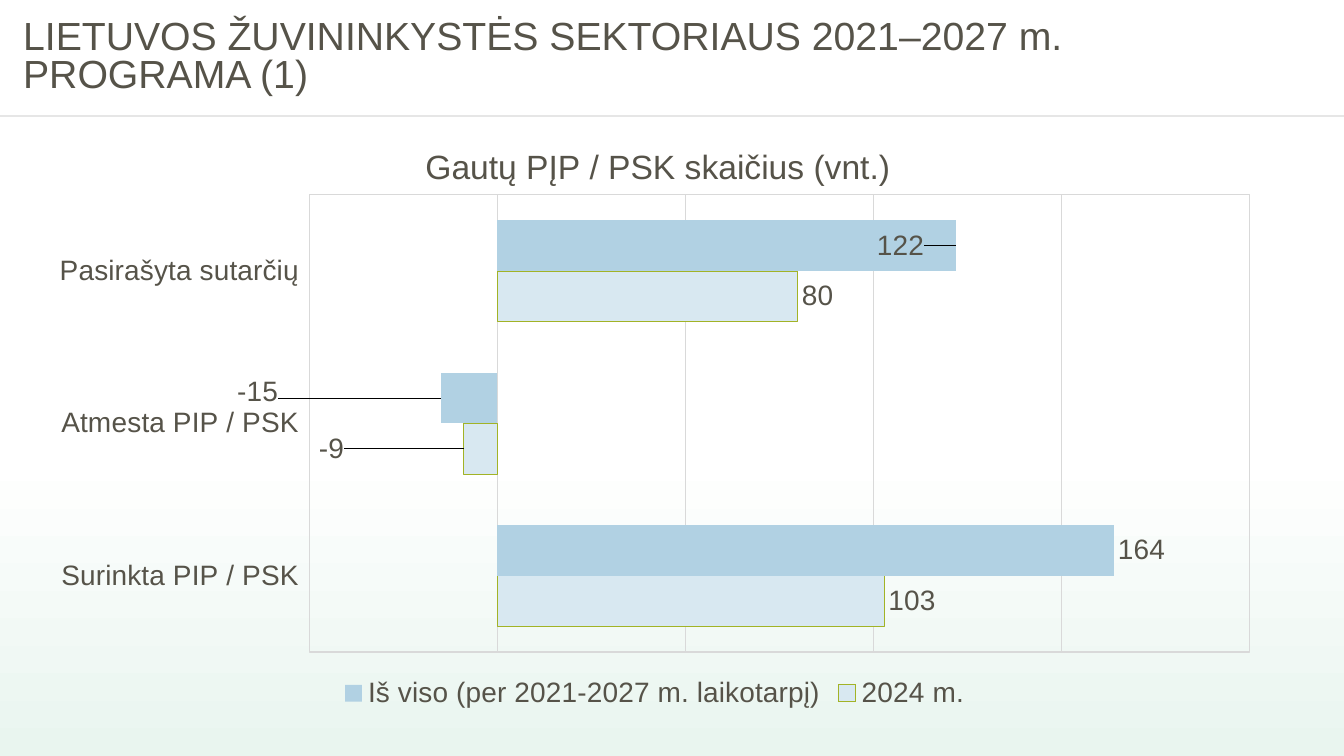
from pptx import Presentation
from pptx.chart.data import CategoryChartData
from pptx.dml.color import RGBColor
from pptx.enum.chart import XL_CHART_TYPE as ChartType
from pptx.enum.chart import XL_LABEL_POSITION as LabelPosition
from pptx.enum.chart import XL_LEGEND_POSITION as LegendPosition
from pptx.enum.chart import XL_TICK_LABEL_POSITION as TickLabels
from pptx.enum.chart import XL_TICK_MARK as TickMark
from pptx.enum.shapes import MSO_CONNECTOR as Connector
from pptx.enum.shapes import MSO_SHAPE as Shape
from pptx.enum.text import MSO_ANCHOR as Anchor
from pptx.enum.text import MSO_AUTO_SIZE as AutoSize
from pptx.enum.text import PP_ALIGN as Align
from pptx.oxml import parse_xml
from pptx.oxml.ns import nsdecls, qn
from pptx.util import Cm, Pt

TITLE_LINES = ["LIETUVOS ŽUVININKYSTĖS SEKTORIAUS 2021–2027 m. ", "PROGRAMA (1)"]
CHART_TITLE = "Gautų PĮP / PSK skaičius (vnt.)"
CATEGORIES = ["Surinkta PIP / PSK", "Atmesta PIP / PSK", "Pasirašyta sutarčių"]
# moved: point index -> label shift as a share of the chart's width and height
SERIES = [
    {"name": "2024 m.", "values": [103, -9, 80], "fill": "light", "line": "olive",
     "moved": {1: (-0.093, 0)}},
    {"name": "Iš viso (per 2021-2027 m. laikotarpį)", "values": [164, -15, 122],
     "fill": "blue", "line": None,
     "moved": {1: (-0.128, -0.01), 2: (-0.067, 0)}},
]
COLORS = {"text": "565349", "grid": "D9D9D9", "rule": "E6E6E6", "light": "D8E8F1",
          "blue": "B1D1E3", "olive": "A2B326", "mint": "E9F5EF", "white": "FFFFFF",
          "backdrop": "A6B727"}
FONT = "Arial"
WIDTH, HEIGHT = Cm(33.87), Cm(19.05)


def color(name):
    return RGBColor.from_string(COLORS[name])


def style_font(font, size):
    font.name, font.size, font.bold = FONT, Pt(size), False
    font.color.rgb = color("text")


def style_line(line, name, width=0.75):
    line.color.rgb = color(name)
    line.width = Pt(width)


def set_layout(parent, index, inner=False, **shares):
    """Give a chart part a manual layout, in shares of the chart's size."""
    for old in parent.findall(qn("c:layout")):
        parent.remove(old)
    target = '<c:layoutTarget val="inner"/>' if inner else ""
    modes = '<c:xMode val="edge"/><c:yMode val="edge"/>' if parent.tag != qn("c:dLbl") else ""
    sizes = "".join(f'<c:{key} val="{value}"/>' for key, value in shares.items())
    parent.insert(index, parse_xml(
        f'<c:layout {nsdecls("c")}><c:manualLayout>{target}{modes}{sizes}'
        "</c:manualLayout></c:layout>"))


def add_backdrop(page):
    page.background.fill.solid()
    page.background.fill.fore_color.rgb = color("backdrop")
    panel = page.shapes.add_shape(Shape.RECTANGLE, 0, 0, WIDTH, HEIGHT)
    panel.shadow.inherit = False
    panel.line.fill.background()
    panel.fill.gradient()
    panel.fill.gradient_angle = 90
    for stop, name, position in zip(panel.fill.gradient_stops, ("mint", "white"), (0, 0.4)):
        stop.color.rgb = color(name)
        stop.position = position
    rule = page.shapes.add_connector(Connector.STRAIGHT, 0, Cm(2.92), WIDTH, Cm(2.92))
    style_line(rule.line, "rule", 1)
    rule.element.spPr.append(parse_xml(f'<a:effectLst {nsdecls("a")}/>'))


def fill_title(page):
    title = page.shapes.title
    title.element.getparent().append(title.element)  # in front of the backdrop
    title.left, title.top, title.width, title.height = Cm(0.33), Cm(0.3), Cm(30.94), Cm(2.34)
    frame = title.text_frame
    frame.word_wrap, frame.auto_size = True, AutoSize.NONE
    frame.vertical_anchor = Anchor.MIDDLE
    para = frame.paragraphs[0]
    para.alignment, para.line_spacing = Align.LEFT, 0.8
    for number, line in enumerate(TITLE_LINES):
        if number:
            para.add_line_break()
        span = para.add_run()
        span.text = line
        style_font(span.font, 28)


def style_axes(chart):
    names, values = chart.category_axis, chart.value_axis
    names.tick_label_position = TickLabels.LOW
    names.major_tick_mark = names.minor_tick_mark = TickMark.NONE
    style_font(names.tick_labels.font, 20)
    style_line(names.format.line, "grid")
    values.minimum_scale, values.maximum_scale, values.major_unit = -50, 200, 50
    values.has_major_gridlines = True
    style_line(values.major_gridlines.format.line, "grid")
    values.visible = False


def style_series(chart):
    plot = chart.plots[0]
    plot.gap_width, plot.overlap, plot.vary_by_categories = 100, 0, False
    for series, entry, node in zip(plot.series, SERIES, chart.element.xpath(".//c:ser")):
        series.format.fill.solid()
        series.format.fill.fore_color.rgb = color(entry["fill"])
        if entry["line"]:
            style_line(series.format.line, entry["line"])
        else:
            series.format.line.fill.background()
        labels = series.data_labels
        labels.show_value, labels.position = True, LabelPosition.OUTSIDE_END
        style_font(labels.font, 20)
        for index, (x, y) in entry["moved"].items():
            label = series.points[index].data_label
            label.position = LabelPosition.OUTSIDE_END
            style_font(label.font, 20)
            set_layout(node.xpath(f"c:dLbls/c:dLbl[c:idx/@val={index}]")[0], 1, x=x, y=y)


def add_bars(page):
    data = CategoryChartData()
    data.categories = CATEGORIES
    for entry in SERIES:
        data.add_series(entry["name"], entry["values"])
    chart = page.shapes.add_chart(ChartType.BAR_CLUSTERED, Cm(0.89), Cm(2.97),
                                  Cm(31.22), Cm(15.04), data).chart
    style_font(chart.font, 20)
    chart.has_title = True
    span = chart.chart_title.text_frame.paragraphs[0].add_run()
    span.text = CHART_TITLE
    style_font(span.font, 24)
    chart.has_legend = True
    chart.legend.position = LegendPosition.BOTTOM
    chart.legend.include_in_layout = False
    style_font(chart.legend.font, 20)
    style_axes(chart)
    style_series(chart)
    set_layout(chart.element.xpath("c:chart/c:title")[0], 1, x=0.31, y=0.035)
    area = chart.element.xpath(".//c:plotArea")[0]
    set_layout(area, 0, inner=True, x=0.221, y=0.129, w=0.759, h=0.766)
    area.append(parse_xml(
        f'<c:spPr {nsdecls("c", "a")}><a:noFill/><a:ln w="9525"><a:solidFill>'
        f'<a:srgbClr val="{COLORS["grid"]}"/></a:solidFill></a:ln></c:spPr>'))


def main():
    deck = Presentation()
    deck.slide_width, deck.slide_height = WIDTH, HEIGHT
    page = deck.slides.add_slide(deck.slide_layouts[5])
    add_backdrop(page)
    fill_title(page)
    add_bars(page)
    deck.save("out.pptx")


if __name__ == "__main__":
    main()
